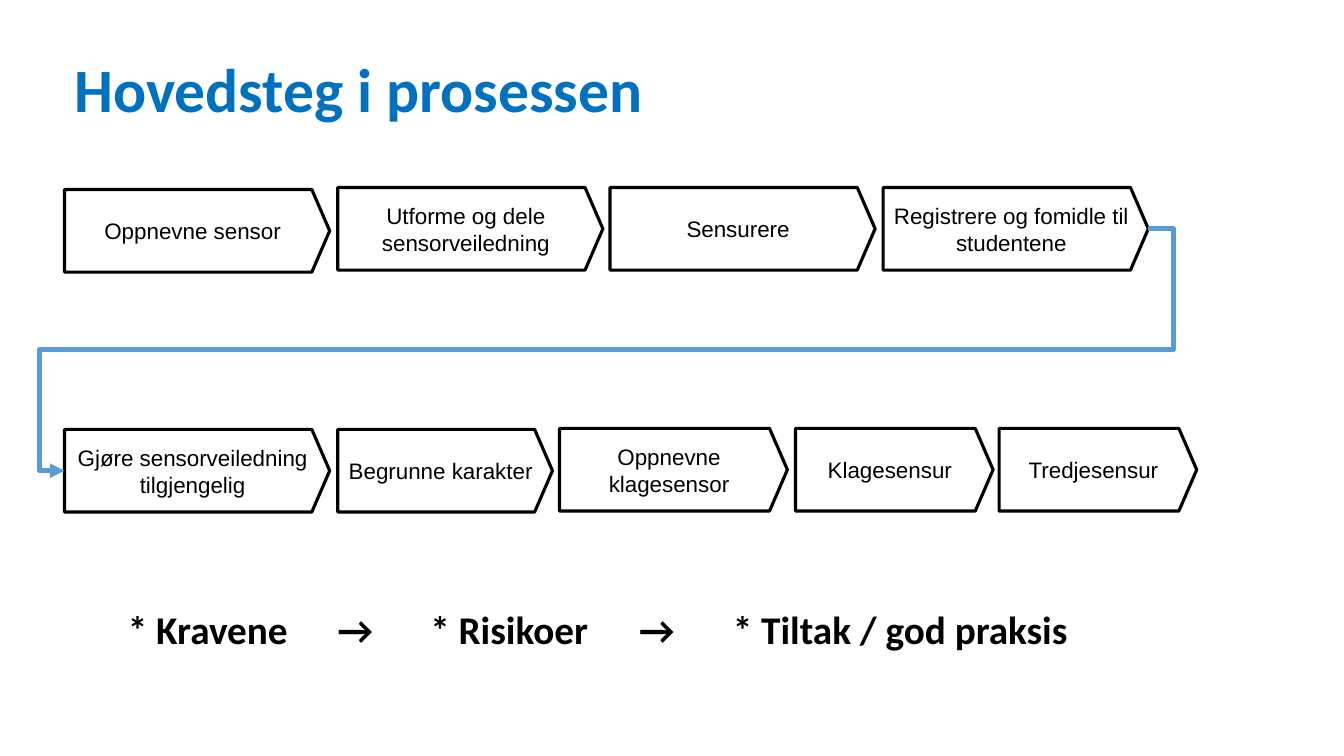
from lxml import etree
from pptx import Presentation
from pptx.dml.color import RGBColor
from pptx.enum.shapes import MSO_CONNECTOR, MSO_SHAPE
from pptx.enum.text import MSO_ANCHOR as ANCHOR, MSO_AUTO_SIZE as AUTO, PP_ALIGN as ALIGN
from pptx.oxml.ns import qn
from pptx.util import Inches, Pt

TITLE_BLUE = RGBColor(0x00, 0x70, 0xC0)
ARROW_BLUE = RGBColor(0x5B, 0x9B, 0xD5)
BLACK = RGBColor(0, 0, 0)
WHITE = RGBColor(0xFF, 0xFF, 0xFF)


def set_text(sp, text, font="Calibri", size=16, color=BLACK, bold=False,
             align=ALIGN.LEFT, anchor=ANCHOR.MIDDLE, tabs=()):
    tf = sp.text_frame
    tf.word_wrap = True
    tf.auto_size = AUTO.NONE
    tf.vertical_anchor = anchor
    p = tf.paragraphs[0]
    p.alignment = align
    if tabs:
        tab_list = etree.SubElement(p._p.get_or_add_pPr(), qn("a:tabLst"))
        for pos in tabs:
            etree.SubElement(tab_list, qn("a:tab"), pos=str(Inches(pos)), algn="l")
    r = p.add_run()
    r.text = text
    r.font.name, r.font.size, r.font.bold = font, Pt(size), bold
    r.font.color.rgb = color
    return p


prs = Presentation()
prs.slide_width, prs.slide_height = Inches(13.33), Inches(7.5)
slide = prs.slides.add_slide(prs.slide_layouts[5])

title = slide.shapes.title
title.left, title.top = Inches(0.64), Inches(0.19)
title.width, title.height = Inches(11.5), Inches(1.45)
p = set_text(title, "Hovedsteg i prosessen", size=44, color=TITLE_BLUE, bold=True)
p.line_spacing = 0.9

# Process steps: left, top, width, label
STEPS = [
    (0.64, 1.88, 2.63, "Oppnevne sensor"),
    (3.35, 1.86, 2.63, "Utforme og dele sensorveiledning"),
    (6.05, 1.86, 2.63, "Sensurere"),
    (8.76, 1.86, 2.63, "Registrere og fomidle til studentene"),
    (0.64, 4.26, 2.63, "Gjøre sensorveiledning tilgjengelig"),
    (3.35, 4.26, 2.13, "Begrunne karakter"),
    (5.55, 4.25, 2.26, "Oppnevne klagesensor"),
    (7.89, 4.25, 1.96, "Klagesensur"),
    (9.91, 4.25, 1.96, "Tredjesensur"),
]
steps = []
for left, top, width, label in STEPS:
    sp = slide.shapes.add_shape(MSO_SHAPE.PENTAGON, Inches(left), Inches(top),
                                Inches(width), Inches(0.82))
    sp.adjustments[0] = 0.216
    sp.shadow.inherit = False
    sp.fill.solid()
    sp.fill.fore_color.rgb = WHITE
    sp.line.color.rgb = BLACK
    sp.line.width = Pt(2.25)
    set_text(sp, label, font="Arial", align=ALIGN.CENTER)
    steps.append(sp)

# Arrow from the end of the first row to the start of the second
link = slide.shapes.add_connector(MSO_CONNECTOR.ELBOW, Inches(11.39), Inches(2.27),
                                  Inches(0.64), Inches(4.67))
link.begin_connect(steps[3], 3)
link.end_connect(steps[4], 1)
link.line.color.rgb = ARROW_BLUE
link.line.width = Pt(3.5)
spPr = link._element.spPr
geom = spPr.find(qn("a:prstGeom"))
geom.set("prst", "bentConnector5")
guides = geom.find(qn("a:avLst"))
for i, value in enumerate((-2300, 50000, 102300), start=1):
    etree.SubElement(guides, qn("a:gd"), name=f"adj{i}", fmla=f"val {value}")
etree.SubElement(spPr.find(qn("a:ln")), qn("a:tailEnd"), type="triangle")
etree.SubElement(spPr, qn("a:effectLst"))

summary = slide.shapes.add_textbox(Inches(1.17), Inches(5.96), Inches(10.7), Inches(0.57))
set_text(summary, "* Kravene\t→\t* Risikoer\t→\t* Tiltak / god praksis", size=28,
         bold=True, anchor=ANCHOR.TOP, tabs=(2.08, 3, 5.07, 6))

prs.save("out.pptx")
